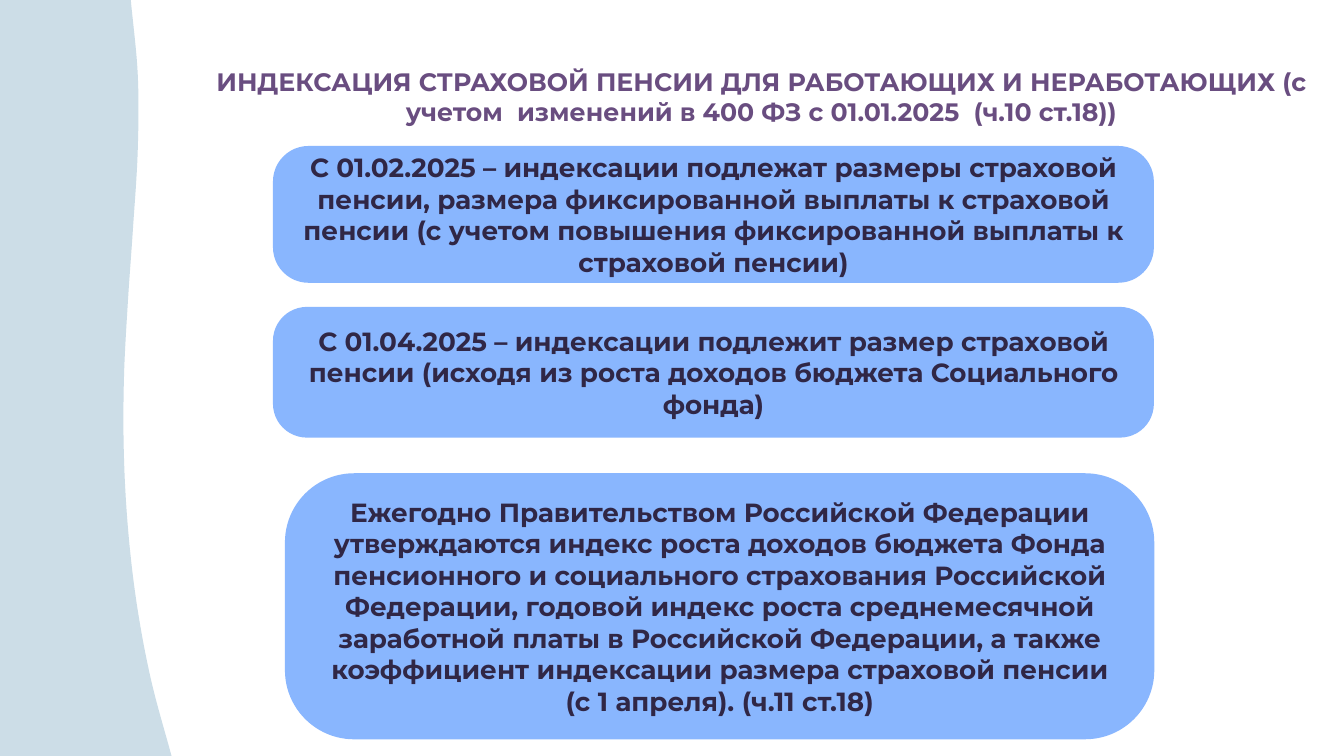
from pptx import Presentation
from pptx.dml.color import RGBColor
from pptx.enum import shapes, text
from pptx.util import Pt

WHITE = RGBColor(0xFF, 0xFF, 0xFF)
PALE_BLUE = RGBColor(0xCC, 0xDD, 0xE7)
CARD_BLUE = RGBColor(0x89, 0xB6, 0xFE)
PURPLE = RGBColor(0x69, 0x4D, 0x80)
INK = RGBColor(0x30, 0x27, 0x46)
FONT = "Montserrat"

WIDTH, HEIGHT = 1280, 720
# Right edge of the wave, sampled at equal steps from top to bottom
WAVE_EDGE = [124.6, 131.3, 131.2, 126.8, 121.8, 118.1, 118, 122, 130.4, 144, 163.4]
WAVE_STEPS = 8

TITLE = ("ИНДЕКСАЦИЯ СТРАХОВОЙ ПЕНСИИ ДЛЯ РАБОТАЮЩИХ И НЕРАБОТАЮЩИХ "
         "(с учетом  изменений в 400 ФЗ с 01.01.2025  (ч.10 ст.18))")
CARDS = [
    ((260, 139, 839, 130.3),
     "С 01.02.2025 – индексации подлежат размеры страховой пенсии, размера "
     "фиксированной выплаты к страховой пенсии (с учетом повышения "
     "фиксированной выплаты к страховой пенсии)"),
    ((260, 292.3, 839, 124.5),
     "С 01.04.2025 – индексации подлежит размер страховой пенсии (исходя из "
     "роста доходов бюджета Социального фонда)"),
    ((271.4, 450.7, 828, 253.4),
     "Ежегодно Правительством Российской Федерации утверждаются индекс роста "
     "доходов бюджета Фонда пенсионного и социального страхования Российской "
     "Федерации, годовой индекс роста среднемесячной заработной платы в "
     "Российской Федерации, а также коэффициент индексации размера страховой "
     "пенсии (с 1 апреля). (ч.11 ст.18)"),
]


def smooth(values, steps):
    """Catmull-Rom curve through equally spaced values."""
    padded = [2 * values[0] - values[1], *values, 2 * values[-1] - values[-2]]
    curve = []
    for a, b, c, d in zip(padded, padded[1:], padded[2:], padded[3:]):
        for step in range(steps):
            t = step / steps
            curve.append(b + t * (c - a) / 2
                         + t ** 2 * (2 * a - 5 * b + 4 * c - d) / 2
                         + t ** 3 * (3 * b - a - 3 * c + d) / 2)
    return curve + [values[-1]]


def paint(shape, colour):
    shape.shadow.inherit = False
    shape.fill.solid()
    shape.fill.fore_color.rgb = colour
    shape.line.fill.background()


def write(frame, words, size, colour):
    frame.word_wrap = True
    para = frame.paragraphs[0]
    para.text = words
    para.alignment = text.PP_ALIGN.CENTER
    para.font.name = FONT
    para.font.size = Pt(size)
    para.font.bold = True
    para.font.color.rgb = colour


def add_wave(page, left, top, height):
    edge = smooth(WAVE_EDGE, WAVE_STEPS)
    gap = height / (len(edge) - 1)
    points = [(Pt(left + x), Pt(top + i * gap)) for i, x in enumerate(edge)]
    builder = page.shapes.build_freeform(Pt(left), Pt(top))
    builder.add_line_segments(points + [(Pt(left), Pt(top + height))], close=True)
    paint(builder.convert_to_shape(), PALE_BLUE)


def add_title(page, left, top, width, height):
    box = page.shapes.add_textbox(Pt(left), Pt(top), Pt(width), Pt(height))
    write(box.text_frame, TITLE, 24, PURPLE)


def add_card(page, words, left, top, width, height):
    card = page.shapes.add_shape(shapes.MSO_SHAPE.ROUNDED_RECTANGLE,
                                 Pt(left), Pt(top), Pt(width), Pt(height))
    card.adjustments[0] = 0.26
    paint(card, CARD_BLUE)
    frame = card.text_frame
    frame.margin_left = frame.margin_right = Pt(13)
    frame.margin_top = frame.margin_bottom = Pt(6.5)
    frame.vertical_anchor = text.MSO_ANCHOR.MIDDLE
    write(frame, words, 25, INK)


def main():
    deck = Presentation()
    deck.slide_width, deck.slide_height = Pt(WIDTH), Pt(HEIGHT)
    page = deck.slides.add_slide(deck.slide_layouts[6])
    page.background.fill.solid()
    page.background.fill.fore_color.rgb = WHITE

    # Wave along the left side
    add_wave(page, 0, 0, HEIGHT)
    # Heading
    add_title(page, 186.5, 59.8, 1077, 65.5)
    # Indexation cards
    for area, words in CARDS:
        add_card(page, words, *area)

    deck.save("out.pptx")


if __name__ == "__main__":
    main()
